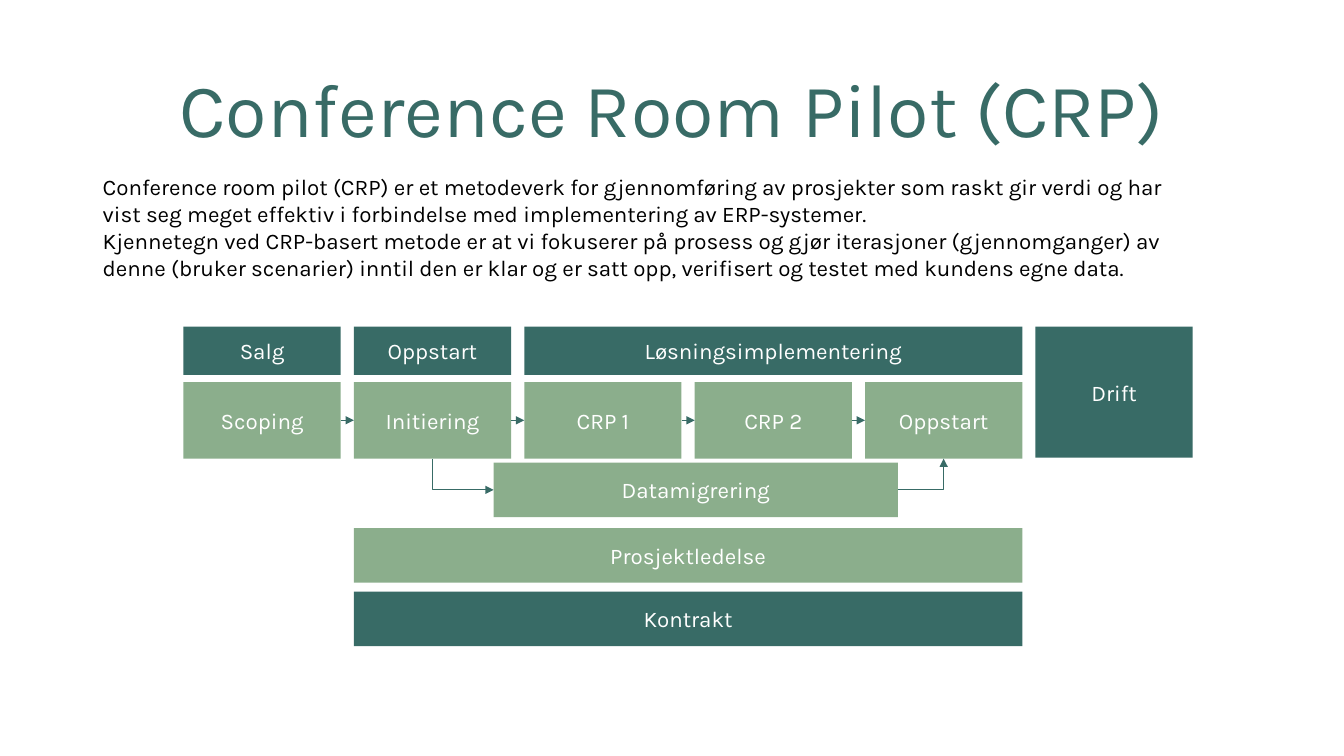
from itertools import pairwise

from lxml import etree
from pptx import Presentation, util as u
from pptx.dml.color import RGBColor
from pptx.enum import shapes, text
from pptx.oxml.ns import qn

TEAL = RGBColor(0x38, 0x6B, 0x66)
SAGE = RGBColor(0x8B, 0xAE, 0x8C)
WHITE = RGBColor(0xFF, 0xFF, 0xFF)
BLACK = RGBColor(0x00, 0x00, 0x00)
FONT = "Karla"

GRID_LEFT, PITCH, GUTTER = 1.82, 1.69, 0.13
# Top and height of each row, in inches
PHASE_ROW = (3.24, 0.48)
STEP_ROW = (3.79, 0.76)
DRIFT_ROW = (3.24, 1.3)
MIGRATION_ROW = (4.59, 0.54)
MANAGEMENT_ROW = (5.24, 0.54)
CONTRACT_ROW = (5.87, 0.54)

TOP, LEFT, BOTTOM, RIGHT = range(4)

TITLE = "Conference Room Pilot (CRP)"
INTRO = (
    "Conference room pilot (CRP) er et metodeverk for gjennomføring av prosjekter "
    "som raskt gir verdi og har vist seg meget effektiv i forbindelse med "
    "implementering av ERP-systemer.\v"
    "Kjennetegn ved CRP-basert metode er at vi fokuserer på prosess og gjør "
    "iterasjoner (gjennomganger) av denne (bruker scenarier) inntil den er klar og "
    "er satt opp, verifisert og testet med kundens egne data."
)


def write(shape, wording, size, color, align, anchor):
    frame = shape.text_frame
    frame.word_wrap = True
    frame.vertical_anchor = anchor
    frame.text = wording
    paragraph = frame.paragraphs[0]
    paragraph.alignment = align
    paragraph.font.name = FONT
    paragraph.font.size = u.Pt(size)
    paragraph.font.color.rgb = color
    return paragraph


def add_text(slide, area, wording, size, color, align, anchor):
    box = slide.shapes.add_textbox(*map(u.Inches, area))
    return write(box, wording, size, color, align, anchor)


def add_block(slide, wording, column, span, row, fill):
    """Add a labelled rectangle over `span` grid columns, starting at `column`."""
    top, height = row
    area = (GRID_LEFT + column * PITCH, top, span * PITCH - GUTTER, height)
    block = slide.shapes.add_shape(
        shapes.MSO_SHAPE.RECTANGLE, *map(u.Inches, area))
    block.shadow.inherit = False
    block.fill.solid()
    block.fill.fore_color.rgb = fill
    block.line.fill.background()
    write(block, wording, 16, WHITE,
          text.PP_ALIGN.CENTER, text.MSO_ANCHOR.MIDDLE)
    return block


def join(slide, kind, start, start_side, end, end_side, arrow="tailEnd"):
    """Connect two blocks; `arrow` names the end that carries the arrowhead."""
    link = slide.shapes.add_connector(kind, 0, 0, 0, 0)
    link.begin_connect(start, start_side)
    link.end_connect(end, end_side)
    link.line.color.rgb = TEAL
    link.line.width = u.Pt(0.5)
    line = link.line._get_or_add_ln()
    etree.SubElement(line, qn("a:" + arrow), type="triangle")
    properties = link._element.spPr
    etree.SubElement(properties, qn("a:effectLst"))
    if kind == shapes.MSO_CONNECTOR.ELBOW:
        # One bend: horizontal first, then vertical
        properties.find(qn("a:prstGeom")).set("prst", "bentConnector2")


def main():
    deck = Presentation()
    deck.slide_width, deck.slide_height = u.Inches(13.33), u.Inches(7.5)
    slide = deck.slides.add_slide(deck.slide_layouts[6])

    title = add_text(slide, (0, 0.4, 13.33, 1.45), TITLE, 54, TEAL,
                     text.PP_ALIGN.CENTER, text.MSO_ANCHOR.MIDDLE)
    title.line_spacing = 0.9
    add_text(slide, (0.92, 1.67, 10.92, 1.18), INTRO, 16, BLACK,
             text.PP_ALIGN.LEFT, text.MSO_ANCHOR.TOP)

    for phase, column, span in (("Salg", 0, 1), ("Oppstart", 1, 1),
                                ("Løsningsimplementering", 2, 3)):
        add_block(slide, phase, column, span, PHASE_ROW, TEAL)
    add_block(slide, "Drift", 5, 1, DRIFT_ROW, TEAL)

    steps = [add_block(slide, step, column, 1, STEP_ROW, SAGE)
             for column, step in enumerate(
                 ("Scoping", "Initiering", "CRP 1", "CRP 2", "Oppstart"))]
    migration = add_block(slide, "Datamigrering", 1.82, 2.45, MIGRATION_ROW, SAGE)
    add_block(slide, "Prosjektledelse", 1, 4, MANAGEMENT_ROW, SAGE)
    add_block(slide, "Kontrakt", 1, 4, CONTRACT_ROW, TEAL)

    for step, following in pairwise(steps):
        join(slide, shapes.MSO_CONNECTOR.STRAIGHT, step, RIGHT, following, LEFT)
    initiation, startup = steps[1], steps[-1]
    elbow = shapes.MSO_CONNECTOR.ELBOW
    join(slide, elbow, migration, LEFT, initiation, BOTTOM, arrow="headEnd")
    join(slide, elbow, migration, RIGHT, startup, BOTTOM)

    deck.save("out.pptx")


if __name__ == "__main__":
    main()
